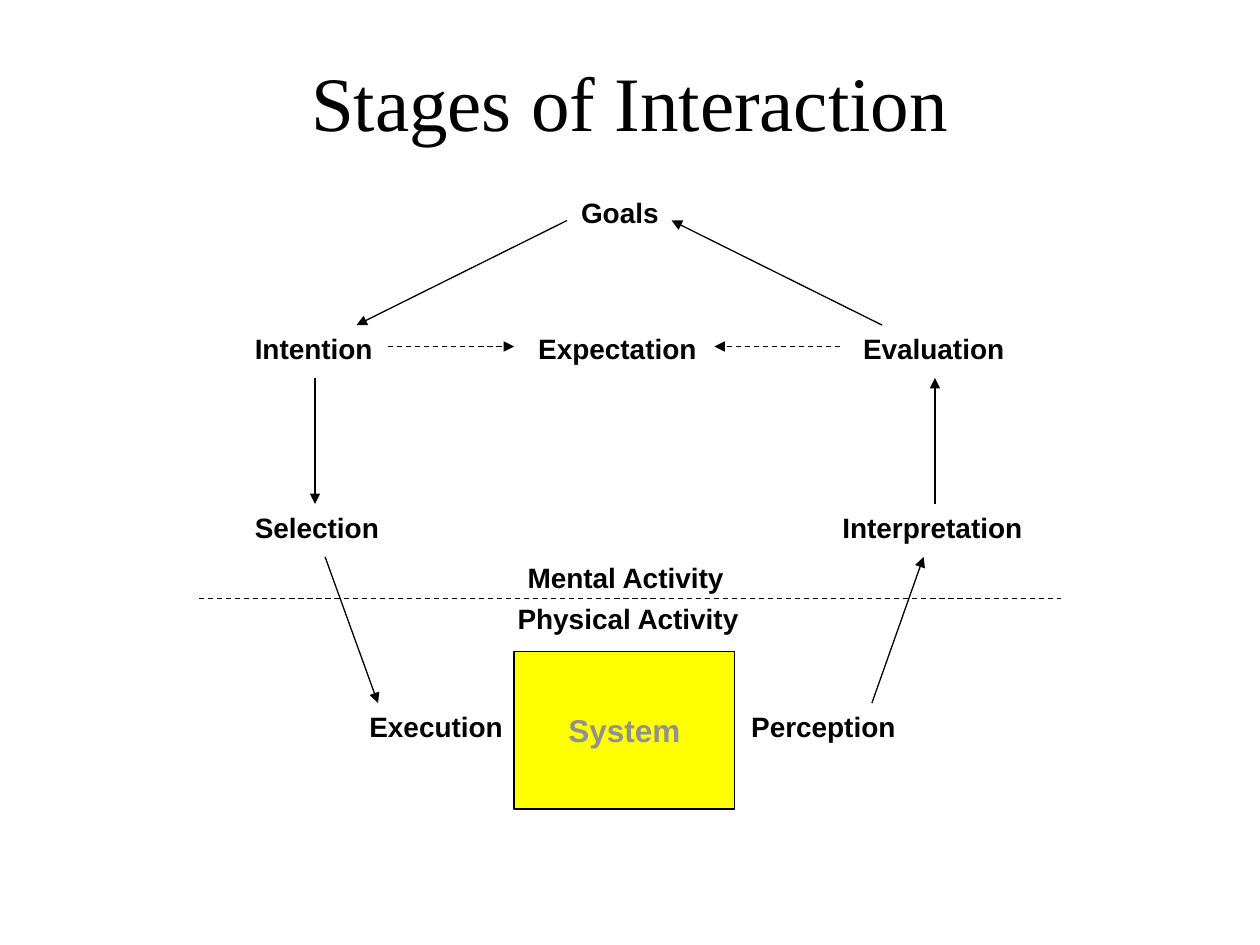
import pptx
import pptx.dml.color
import pptx.enum.dml
import pptx.enum.shapes
import pptx.enum.text
import pptx.oxml.ns
import pptx.util
from lxml import etree

Inches = pptx.util.Inches
Align = pptx.enum.text.PP_ALIGN


def colour(hex_value):
    return pptx.dml.color.RGBColor.from_string(hex_value)


class Diagram:
    """Draws the elements of a stage diagram in one style on one slide."""

    ink = "000000"
    label_font = "Arial"
    title_font = "Times New Roman"
    label_size = 16
    label_height = 0.37
    line_width = 0.75

    def __init__(self, slide):
        self.shapes = slide.shapes

    def set_text(self, shape, text, size, font, ink, bold, align):
        frame = shape.text_frame
        frame.vertical_anchor = pptx.enum.text.MSO_ANCHOR.MIDDLE
        frame.text = text
        paragraph = frame.paragraphs[0]
        paragraph.alignment = align
        paragraph.font.size = pptx.util.Pt(size)
        paragraph.font.name = font
        paragraph.font.bold = bold
        paragraph.font.color.rgb = colour(ink)

    def title(self, text, left, top, width, height):
        heading = self.shapes.add_textbox(Inches(left), Inches(top), Inches(width), Inches(height))
        heading.text_frame.word_wrap = True
        self.set_text(heading, text, 44, self.title_font, self.ink, False, Align.CENTER)

    def label(self, text, left, top, width, align=Align.CENTER):
        stage = self.shapes.add_textbox(
            Inches(left), Inches(top), Inches(width), Inches(self.label_height))
        stage.text_frame.word_wrap = False
        self.set_text(stage, text, self.label_size, self.label_font, self.ink, True, align)

    def box(self, text, left, top, width, height, fill, ink):
        block = self.shapes.add_shape(
            pptx.enum.shapes.MSO_SHAPE.RECTANGLE,
            Inches(left), Inches(top), Inches(width), Inches(height))
        block.shadow.inherit = False
        block.fill.solid()
        block.fill.fore_color.rgb = colour(fill)
        block.line.color.rgb = colour(self.ink)
        block.line.width = pptx.util.Pt(self.line_width)
        block.text_frame.word_wrap = False
        self.set_text(block, text, 18, self.label_font, ink, True, Align.CENTER)

    def line(self, start, end, dashed=False, arrow=True):
        connector = self.shapes.add_connector(
            pptx.enum.shapes.MSO_CONNECTOR.STRAIGHT, *map(Inches, (*start, *end)))
        connector.line.color.rgb = colour(self.ink)
        connector.line.width = pptx.util.Pt(self.line_width)
        if dashed:
            connector.line.dash_style = pptx.enum.dml.MSO_LINE.DASH
        qn = pptx.oxml.ns.qn
        if arrow:
            etree.SubElement(connector.get_or_add_ln(), qn("a:tailEnd"), type="triangle")
        etree.SubElement(connector.element.spPr, qn("a:effectLst"))


def main():
    presentation = pptx.Presentation()
    presentation.slide_width = Inches(10)
    presentation.slide_height = Inches(7.5)
    diagram = Diagram(presentation.slides.add_slide(presentation.slide_layouts[6]))

    diagram.title("Stages of Interaction", 0.75, 0.17, 8.5, 1.25)

    intention_row, selection_row, execution_row = 2.58, 4, 5.58
    stages = [
        ("Goals", 4.51, 1.5, 0.82),
        ("Intention", 1.92, intention_row, 1.14),
        ("Expectation", 4.17, intention_row, 1.46),
        ("Evaluation", 6.75, intention_row, 1.32),
        ("Selection", 1.92, selection_row, 1.19),
        ("Interpretation", 6.58, selection_row, 1.64),
        ("Execution", 2.83, execution_row, 1.26, Align.RIGHT),
        ("Perception", 5.82, execution_row, 1.43),
        ("Mental Activity", 4.08, 4.4, 1.77),
        ("Physical Activity", 4, 4.72, 1.97),
    ]
    for stage in stages:
        diagram.label(*stage)

    diagram.box("System", 4.08, 5.17, 1.75, 1.25, fill="FFFF00", ink="919191")

    steps = [
        ((4.5, 1.75), (2.83, intention_row)),
        ((2.5, 3), (2.5, selection_row)),
        ((2.58, 4.42), (3, execution_row)),
        ((6.92, execution_row), (7.33, 4.42)),
        ((7.42, selection_row), (7.42, 3)),
        ((7, intention_row), (5.33, 1.75)),
    ]
    for start, end in steps:
        diagram.line(start, end)

    expectation_middle = 2.75
    for start, end in ((3.08, 4.08), (6.67, 5.67)):
        diagram.line((start, expectation_middle), (end, expectation_middle), dashed=True)

    activity_border = 4.75
    diagram.line((1.58, activity_border), (8.42, activity_border), dashed=True, arrow=False)

    presentation.save("out.pptx")


if __name__ == "__main__":
    main()
